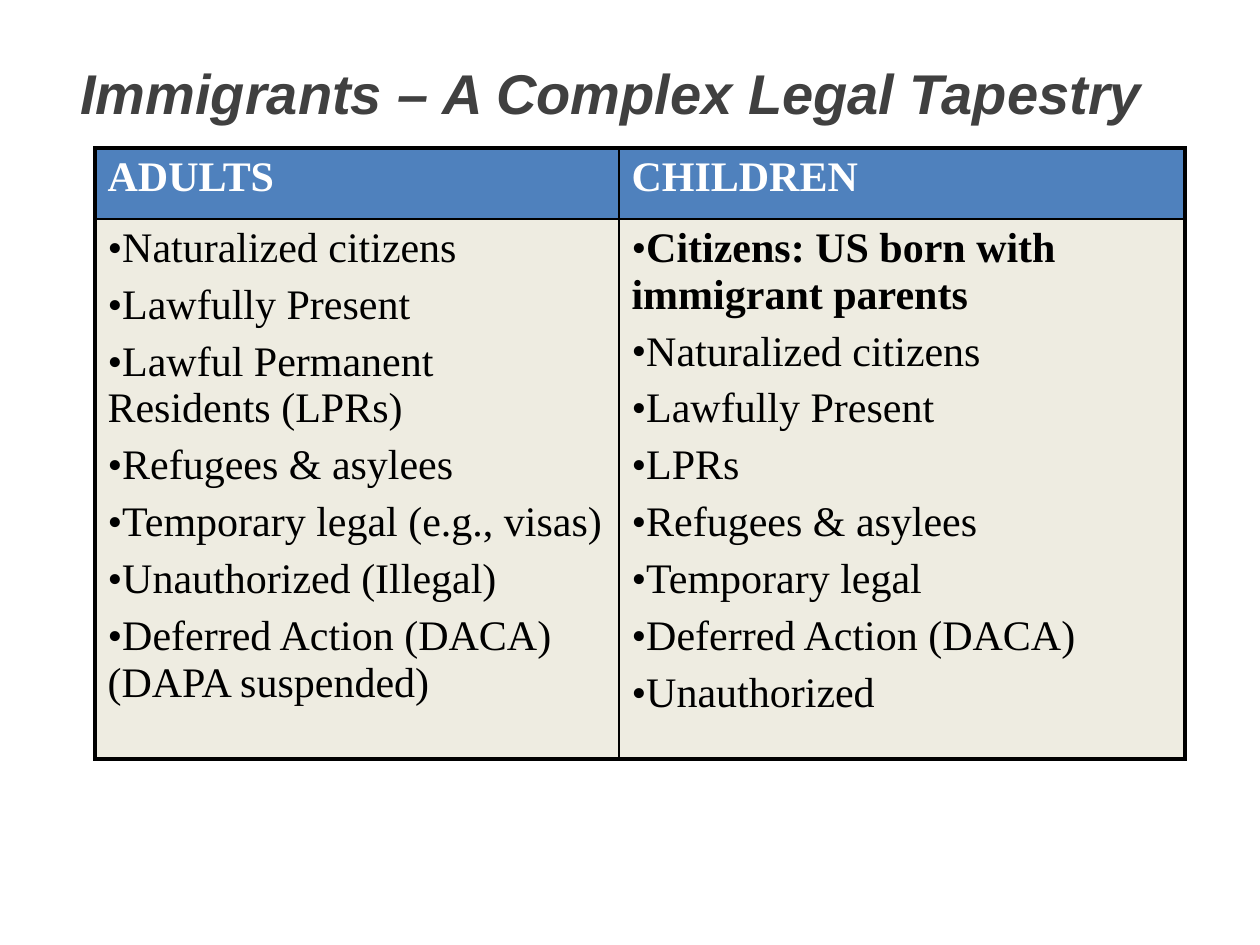
from lxml import etree
from pptx import Presentation, util as u
from pptx.dml.color import RGBColor
from pptx.oxml.ns import qn

# Content
TITLE = "Immigrants – A Complex Legal Tapestry"
GROUPS = {
    "ADULTS": [
        "Naturalized citizens",
        "Lawfully Present",
        "Lawful Permanent Residents (LPRs)",
        "Refugees & asylees",
        "Temporary legal (e.g., visas)",
        "Unauthorized (Illegal)",
        "Deferred Action (DACA) (DAPA suspended)",
    ],
    "CHILDREN": [
        "Citizens: US born with immigrant parents",
        "Naturalized citizens",
        "Lawfully Present",
        "LPRs",
        "Refugees & asylees",
        "Temporary legal",
        "Deferred Action (DACA)",
        "Unauthorized",
    ],
}
EMPHASIS = "Citizens: US born with immigrant parents"

# Layout in px, 126 to the inch
COLUMN_WIDTHS = [524, 566]
ROW_HEIGHTS = [71, 504]
OUTER, INNER = 2.25, 1


def px(n):
    return u.Emu(round(n * 914400 / 126))


def color(value):
    return RGBColor.from_string(value)


def write(paragraph, words, font="Times New Roman", size=24, ink="000000",
          bold=False, italic=False, bullet=False):
    run = paragraph.add_run()
    run.text = words
    run.font.name, run.font.size = font, u.Pt(size)
    run.font.bold, run.font.italic = bold, italic
    run.font.color.rgb = color(ink)
    if bullet:
        paragraph.space_after = u.Pt(6)
        props = paragraph._p.get_or_add_pPr()
        etree.SubElement(props, qn("a:buFont"), typeface=font)
        etree.SubElement(props, qn("a:buChar")).set("char", "•")


def style_cell(cell, fill, borders):
    props = cell._tc.get_or_add_tcPr()
    for side, width in borders.items():
        line = etree.SubElement(props, qn("a:ln" + side), w=str(u.Pt(width)))
        solid = etree.SubElement(line, qn("a:solidFill"))
        etree.SubElement(solid, qn("a:srgbClr"), val="000000")
    cell.fill.solid()
    cell.fill.fore_color.rgb = color(fill)


prs = Presentation()
prs.slide_width, prs.slide_height = px(1260), px(945)
slide = prs.slides.add_slide(prs.slide_layouts[6])

# Title
heading = slide.shapes.add_textbox(px(68), px(52), px(1144), px(110)).text_frame
heading.word_wrap = True
heading.margin_top = px(7)
write(heading.paragraphs[0], TITLE, font="Arial", size=32, ink="404040",
      bold=True, italic=True)

# Table: a heading row above one row of bulleted lists
groups = slide.shapes.add_table(2, 2, px(95), px(148), px(sum(COLUMN_WIDTHS)),
                                px(sum(ROW_HEIGHTS))).table
for column, width in zip(groups.columns, COLUMN_WIDTHS):
    column.width = px(width)
for row, height in zip(groups.rows, ROW_HEIGHTS):
    row.height = px(height)

for c, (name, statuses) in enumerate(GROUPS.items()):
    for r, fill in enumerate(["4F81BD", "EEECE1"]):
        edges = {"L": c == 0, "R": c == 1, "T": r == 0, "B": r == 1}
        style_cell(groups.cell(r, c), fill,
                   {side: OUTER if outer else INNER for side, outer in edges.items()})
    write(groups.cell(0, c).text_frame.paragraphs[0], name, ink="FFFFFF", bold=True)
    body = groups.cell(1, c).text_frame
    for i, status in enumerate(statuses):
        paragraph = body.add_paragraph() if i else body.paragraphs[0]
        write(paragraph, status, bold=status == EMPHASIS, bullet=True)

prs.save("out.pptx")
